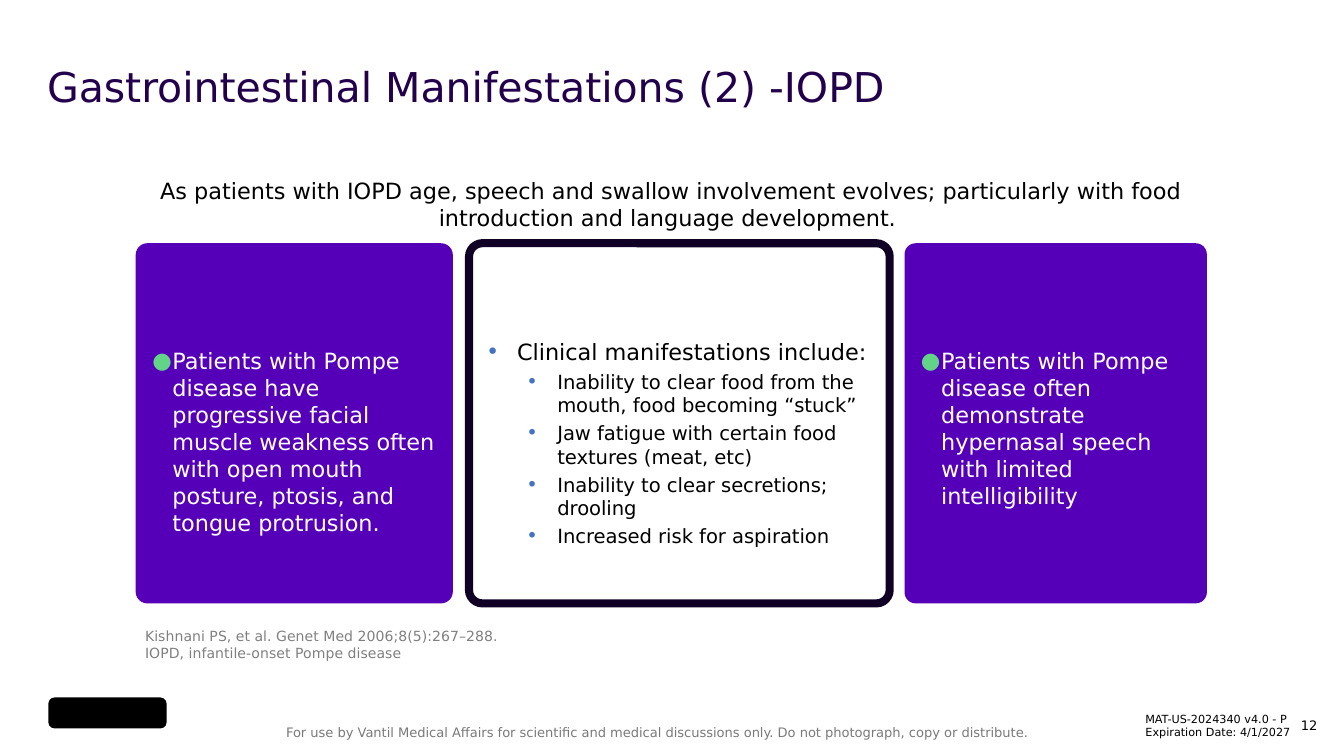
from copy import deepcopy

from lxml import etree
from pptx import Presentation
from pptx.dml.color import RGBColor
from pptx.enum.shapes import MSO_SHAPE
from pptx.enum.text import MSO_ANCHOR, PP_ALIGN
from pptx.oxml.ns import qn
from pptx.util import Inches, Pt

FONT = "DejaVu Sans"
PURPLE, GREEN, BLUE = "5500B8", "62D488", "4472C4"
CONTENT_LEFT, CONTENT_WIDTH = 1.01, 7.97
CARD_TOP, CARD_HEIGHT = 1.81, 2.68


def color(hex_string):
    return RGBColor.from_string(hex_string)


def set_bullet(paragraph, char, bullet_color, left, hanging):
    """Give the paragraph a coloured bullet with a hanging indent."""
    properties = paragraph._p.get_or_add_pPr()
    properties.set("marL", str(Inches(left)))
    properties.set("indent", str(-Inches(hanging)))
    bullet_fill = etree.SubElement(properties, qn("a:buClr"))
    etree.SubElement(bullet_fill, qn("a:srgbClr"), val=bullet_color)
    etree.SubElement(properties, qn("a:buFont"), typeface=FONT)
    etree.SubElement(properties, qn("a:buChar"), char=char)


def write(paragraph, text, size=12, ink="000000", align=PP_ALIGN.LEFT,
          line_spacing=None, before=0, bullet=None):
    """Write text into a paragraph; a newline becomes a line break."""
    if bullet:
        set_bullet(paragraph, *bullet)
    paragraph.alignment = align
    paragraph.line_spacing = line_spacing
    paragraph.space_before = Pt(before)
    for index, line in enumerate(text.split("\n")):
        if index:
            paragraph.add_line_break()
            line_break = paragraph._p.findall(qn("a:br"))[-1]
            line_break.append(deepcopy(run._r.rPr))
        run = paragraph.add_run()
        run.text = line
        run.font.name = FONT
        run.font.size = Pt(size)
        run.font.color.rgb = color(ink)


def set_frame(frame, insets, anchor):
    frame.word_wrap = True
    frame.vertical_anchor = anchor
    (frame.margin_left, frame.margin_top,
     frame.margin_right, frame.margin_bottom) = map(Inches, insets)


def add_text(slide, box, lines, insets=(0.1, 0.05, 0.1, 0.05),
             anchor=MSO_ANCHOR.TOP, **style):
    frame = slide.shapes.add_textbox(*map(Inches, box)).text_frame
    set_frame(frame, insets, anchor)
    for index, line in enumerate(lines):
        paragraph = frame.add_paragraph() if index else frame.paragraphs[0]
        write(paragraph, line, **style)


def add_rounded(slide, box, fill=None, outline=None, corner=0.037):
    shape = slide.shapes.add_shape(MSO_SHAPE.ROUNDED_RECTANGLE,
                                   *map(Inches, box))
    shape.shadow.inherit = False
    shape.adjustments[0] = corner
    if fill:
        shape.fill.solid()
        shape.fill.fore_color.rgb = color(fill)
    else:
        shape.fill.background()
    if outline:
        shape.line.color.rgb = color(outline)
        shape.line.width = Pt(4.33)
    else:
        shape.line.fill.background()
    return shape


def add_card(slide, left, width, text_top, items, **look):
    """Add a card whose items are (text, style) pairs."""
    card = add_rounded(slide, (left, CARD_TOP, width, CARD_HEIGHT), **look)
    frame = card.text_frame
    set_frame(frame, (0.1, text_top, 0.04, 0.05), MSO_ANCHOR.TOP)
    for index, (text, style) in enumerate(items):
        paragraph = frame.add_paragraph() if index else frame.paragraphs[0]
        write(paragraph, text, before=2.4 if index else 0, **style)


def add_cards(slide):
    statement = dict(ink="FFFFFF", bullet=("●", GREEN, 0.15, 0.15))
    heading = dict(bullet=("•", BLUE, 0.23, 0.23))
    symptom = dict(size=10.5, bullet=("•", BLUE, 0.53, 0.23))
    symptoms = [
        "Inability to clear food from the mouth, food becoming “stuck”",
        "Jaw fatigue with certain food textures (meat, etc)",
        "Inability to clear secretions; drooling",
        "Increased risk for aspiration",
    ]
    add_card(slide, CONTENT_LEFT, 2.36, 0.75,
             [("Patients with Pompe disease have progressive facial muscle "
               "weakness often with open mouth posture, ptosis, and tongue "
               "protrusion.", statement)], fill=PURPLE)
    add_card(slide, 3.49, 3.13, 0.68,
             [("Clinical manifestations include:", heading)]
             + [(text, symptom) for text in symptoms], outline="110026")
    add_card(slide, 6.73, 2.25, 0.75,
             [("Patients with Pompe disease often demonstrate hypernasal "
               "speech with limited intelligibility", statement)],
             fill=PURPLE)


def add_footer(slide):
    small_insets = (0.07, 0.04, 0.07, 0.04)
    add_text(slide, (CONTENT_LEFT, 4.63, 3, 0.33),
             ["Kishnani PS, et al. Genet Med 2006;8(5):267–288.",
              "IOPD, infantile-onset Pompe disease"],
             insets=small_insets, size=7.5, ink="808080")
    add_rounded(slide, (0.36, 5.19, 0.88, 0.23), fill="000000", corner=0.2)
    add_text(slide, (2.03, 5.34, 5.95, 0.22),
             ["For use by Vantil Medical Affairs for scientific and medical "
              "discussions only. Do not photograph, copy or distribute."],
             size=7, ink="7A7A7A")
    add_text(slide, (7.89, 5.25, 1.78, 0.3),
             ["MAT-US-2024340 v4.0 - P \nExpiration Date: 4/1/2027"],
             insets=small_insets, anchor=MSO_ANCHOR.MIDDLE, size=6,
             align=PP_ALIGN.RIGHT)
    add_text(slide, (9.38, 5.29, 0.52, 0.23), ["12"], size=7,
             align=PP_ALIGN.RIGHT)


def main():
    deck = Presentation()
    deck.slide_width, deck.slide_height = Inches(10), Inches(10 * 9 / 16)
    slide = deck.slides.add_slide(deck.slide_layouts[6])
    add_text(slide, (0.35, 0.36, 9.28, 0.61),
             ["Gastrointestinal Manifestations (2) -IOPD"],
             insets=(0, 0, 0, 0), anchor=MSO_ANCHOR.MIDDLE, size=22,
             ink="23004C", line_spacing=0.9)
    add_text(slide, (CONTENT_LEFT, 1.27, CONTENT_WIDTH, 0.5),
             ["As patients with IOPD age, speech and swallow involvement "
              "evolves; particularly with food introduction and language "
              "development. "], align=PP_ALIGN.CENTER)
    add_cards(slide)
    add_footer(slide)
    deck.save("out.pptx")


if __name__ == "__main__":
    main()
